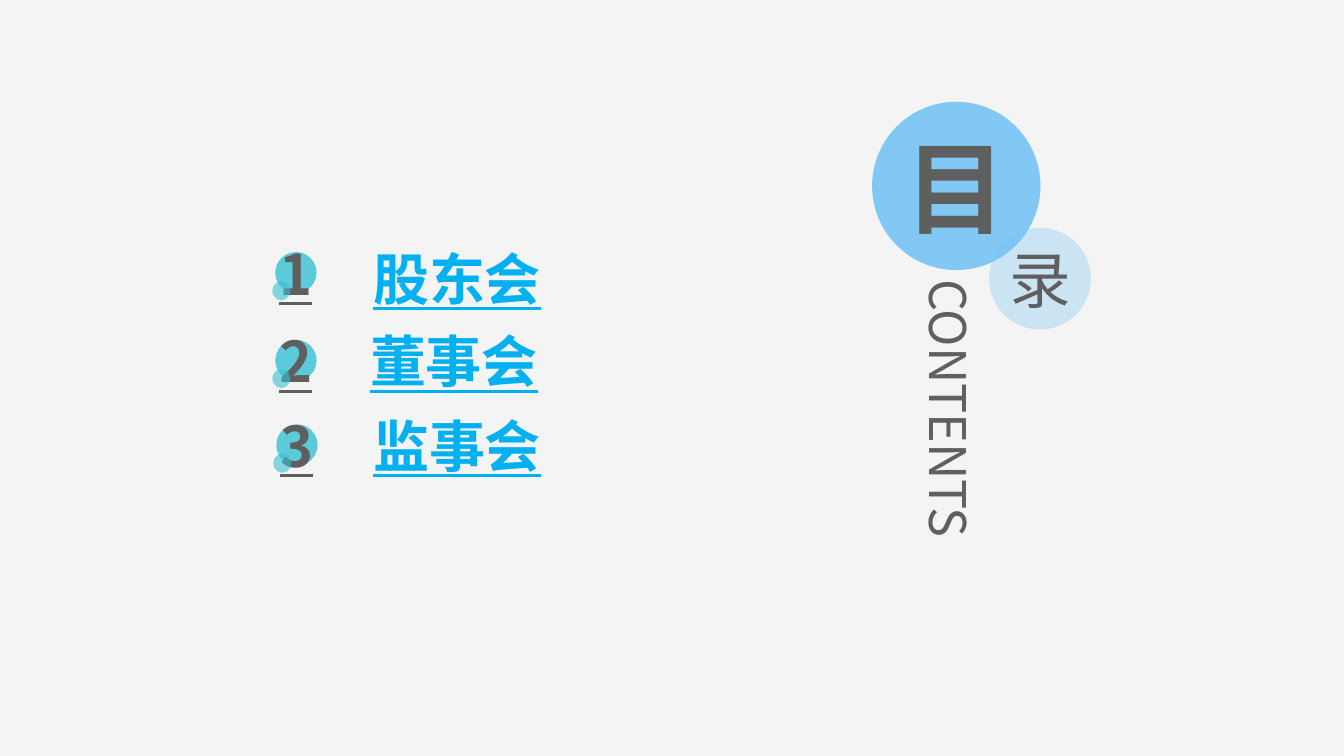
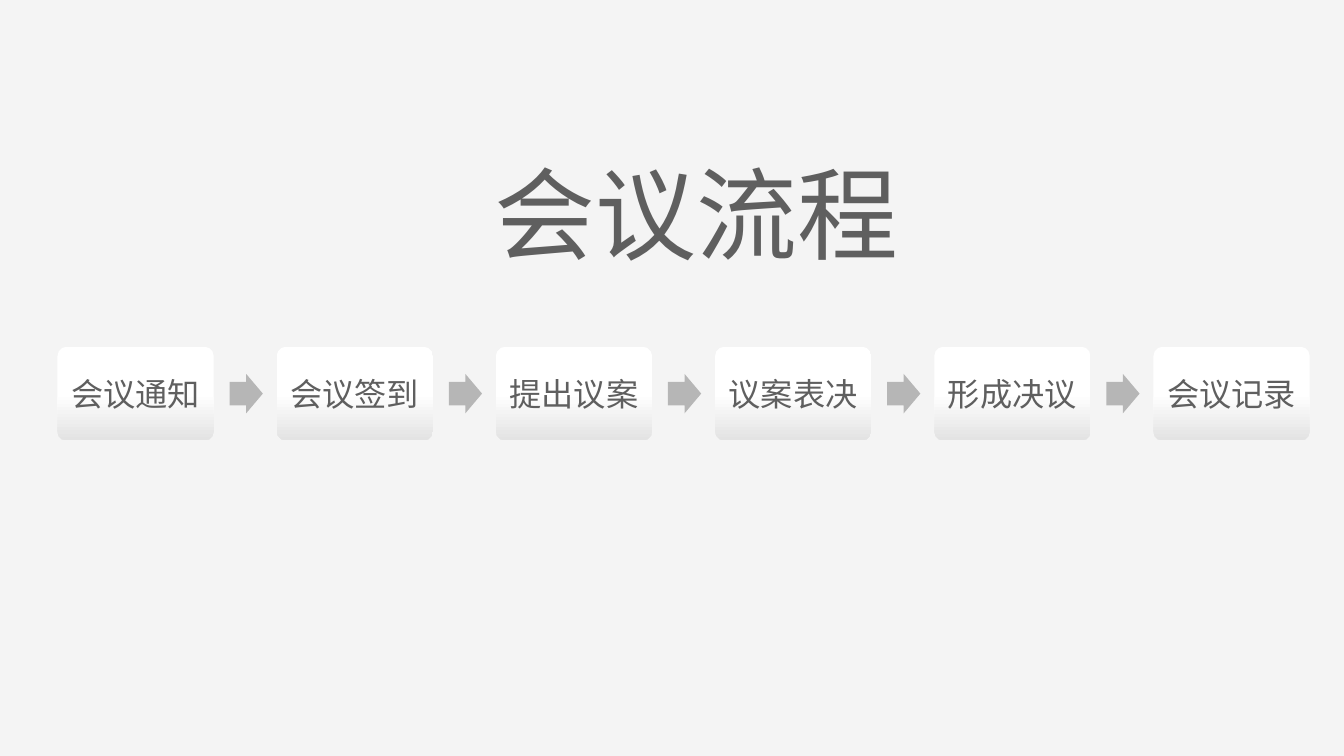
from lxml import etree
from pptx import Presentation
from pptx.dml.color import RGBColor
from pptx.enum.shapes import MSO_SHAPE
from pptx.enum.text import MSO_ANCHOR, MSO_AUTO_SIZE, PP_ALIGN
from pptx.oxml.ns import qn
from pptx.util import Inches, Pt

OVAL, ROUNDED, ARROW = (MSO_SHAPE.OVAL, MSO_SHAPE.ROUNDED_RECTANGLE,
                        MSO_SHAPE.RIGHT_ARROW)
TOP, MIDDLE = MSO_ANCHOR.TOP, MSO_ANCHOR.MIDDLE
LEFT, CENTER = PP_ALIGN.LEFT, PP_ALIGN.CENTER
NO_AUTOFIT = MSO_AUTO_SIZE.NONE

COLORS = {
    "background": "F4F4F4", "text": "5F5F5F", "entry": "00B0F0",
    "teal": "35C0D3", "blue": "6FC2F5", "arrow": "B6B6B6",
    "card_top": "FFFFFF", "card_bottom": "E3E3E3",
}
CJK_FONT = "Noto Sans CJK SC"
STEP_FONT = "Calibri"


def rgb(name):
    return RGBColor.from_string(COLORS[name])


def write(sp, text, size, color="text", font=CJK_FONT, bold=False,
          underline=False, align=CENTER, anchor=MIDDLE, inset=0, wrap=True):
    """Put one formatted paragraph into a shape and return the paragraph."""
    tf = sp.text_frame
    tf.auto_size = NO_AUTOFIT
    tf.word_wrap = wrap
    tf.vertical_anchor = anchor
    tf.margin_left = tf.margin_right = Inches(inset)
    tf.margin_top = tf.margin_bottom = Inches(inset)
    p = tf.paragraphs[0]
    p.text = text
    p.alignment = align
    p.font.name = font
    p.font.size = Pt(size)
    p.font.bold = bold
    p.font.underline = underline
    p.font.color.rgb = rgb(color)
    props = p._p.get_or_add_pPr().get_or_add_defRPr()
    etree.SubElement(props, qn("a:ea")).set("typeface", CJK_FONT)
    return p


def add_shape(s, kind, x, y, w, h, color=None, opacity=100):
    sp = s.shapes.add_shape(kind, Inches(x), Inches(y), Inches(w), Inches(h))
    sp.shadow.inherit = False
    sp.line.fill.background()
    if color:
        sp.fill.solid()
        sp.fill.fore_color.rgb = rgb(color)
        if opacity < 100:
            clr = sp._element.spPr.find(".//" + qn("a:srgbClr"))
            etree.SubElement(clr, qn("a:alpha")).set("val", str(opacity * 1000))
    return sp


def place_title(s, x, y, w, h):
    title = s.shapes.title
    title.left, title.top = Inches(x), Inches(y)
    title.width, title.height = Inches(w), Inches(h)
    return title


def add_number(s, number, x, y):
    """Underlined number on a teal disc with a small dot at lower left."""
    disc = add_shape(s, OVAL, x, y, 0.41, 0.41, "teal", 80)
    write(disc, number, 40, bold=True, underline=True, inset=0.05, wrap=False)
    add_shape(s, OVAL, x - 0.03, y + 0.29, 0.18, 0.19, "teal", 59)


def add_entry(s, text, x, y):
    box = s.shapes.add_textbox(Inches(x), Inches(y), Inches(2.68), Inches(0.67))
    write(box, text, 40, "entry", bold=True, underline=True, align=LEFT)


def add_heading(s, x, y):
    """Two overlapping discs with the vertical title beneath them."""
    big = add_shape(s, OVAL, x, y, 1.67, 1.67, "blue", 86)
    write(big, "目", 72, bold=True)
    small = add_shape(s, OVAL, x + 1.16, y + 1.25, 1.01, 1.01, "blue", 30)
    write(small, "录", 44)
    title = place_title(s, x + 0.43, y + 1.76, 0.67, 3)
    write(title, "CONTENTS", 36, align=LEFT)
    title.text_frame._txBody.bodyPr.set("vert", "eaVert")


def add_step(s, text, x, y, w, h):
    card = add_shape(s, ROUNDED, x, y, w, h)
    card.adjustments[0] = 0.1
    card.fill.gradient()
    card.fill.gradient_angle = 270
    for stop, position, color in zip(card.fill.gradient_stops, (0.5, 1),
                                     ("card_top", "card_bottom")):
        stop.position = position
        stop.color.rgb = rgb(color)
    write(card, text, 23, font=STEP_FONT, inset=0.05)


def add_process(s, steps, x, y, pitch):
    """Row of cards at an equal pitch, with an arrow in each gap."""
    w, h, arrow_w, arrow_h = 1.55, 0.93, 0.33, 0.39
    for i, text in enumerate(steps):
        left = x + i * pitch
        if i:
            gap = pitch - w
            arrow = add_shape(s, ARROW, left - (gap + arrow_w) / 2 + 0.01,
                              y + (h - arrow_h) / 2, arrow_w, arrow_h, "arrow")
            arrow.adjustments[0] = 0.6
            arrow.adjustments[1] = 0.5
        add_step(s, text, left, y, w, h)


def build_contents(s):
    # number position, then entry position
    entries = [
        ("股东会", 2.73, 2.50, 3.70, 2.42),
        ("董事会", 2.73, 3.37, 3.67, 3.24),
        ("监事会", 2.74, 4.21, 3.70, 4.08),
    ]
    for i, (text, number_x, number_y, x, y) in enumerate(entries, 1):
        add_number(s, str(i), number_x, number_y)
        add_entry(s, text, x, y)
    add_heading(s, 8.65, 1.01)


def build_process(s):
    title = place_title(s, 2.14, 1.09, 9.53, 1.59)
    p = write(title, "会议流程", 72, anchor=TOP, inset=0.05)
    p.line_spacing = 1.3
    steps = ["会议通知", "会议签到", "提出议案", "议案表决", "形成决议", "会议记录"]
    add_process(s, steps, 0.57, 3.44, (11.44 - 0.57) / (len(steps) - 1))


def main():
    prs = Presentation()
    prs.slide_width, prs.slide_height = Inches(13.33), Inches(7.5)
    # Shared background
    fill = prs.slide_master.background.fill
    fill.solid()
    fill.fore_color.rgb = rgb("background")
    title_only = prs.slide_layouts[5]
    for build in (build_contents, build_process):
        build(prs.slides.add_slide(title_only))
    prs.save("out.pptx")


if __name__ == "__main__":
    main()
